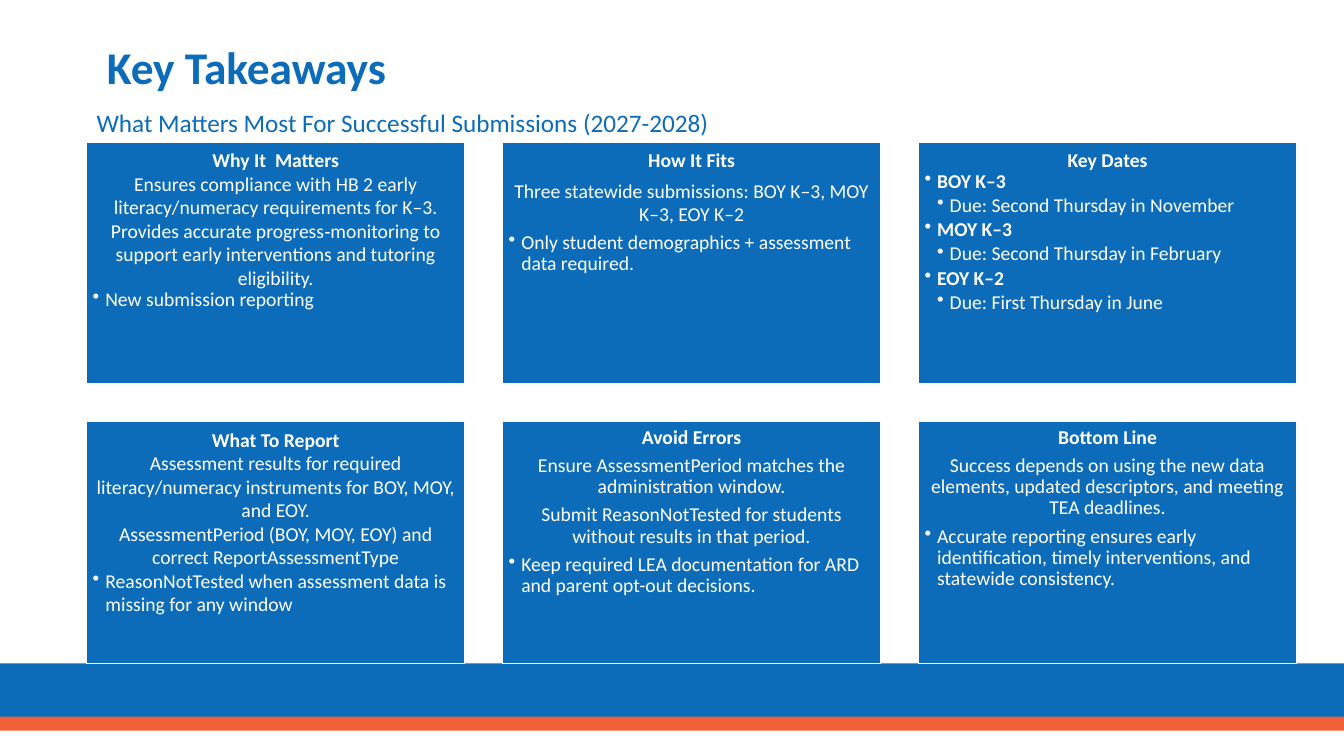
from dataclasses import dataclass

from lxml.etree import SubElement
from pptx import Presentation
from pptx.dml.color import RGBColor
from pptx.enum.shapes import MSO_SHAPE
from pptx.enum.text import MSO_ANCHOR, PP_ALIGN
from pptx.oxml.ns import qn
from pptx.util import Inches, Pt


@dataclass(frozen=True)
class Theme:
    blue: RGBColor = RGBColor(0x0D, 0x6C, 0xB9)
    orange: RGBColor = RGBColor(0xF1, 0x60, 0x38)
    white: RGBColor = RGBColor(0xFF, 0xFF, 0xFF)
    font: str = "Calibri"
    title_size: float = 32.4
    subtitle_size: float = 18
    card_size: float = 14


@dataclass(frozen=True)
class Card:
    heading: str
    leads: tuple = ()
    bullets: tuple = ()  # (text, level, bold)
    spacing: float = 1.0  # heading and leads
    space_after: float = 0
    bullet_spacing: float = 0.9


THEME = Theme()

CARDS = [
    Card("Why It  Matters",
         ("Ensures compliance with HB 2 early literacy/numeracy requirements for K–3.",
          "Provides accurate progress‑monitoring to support early interventions and tutoring eligibility."),
         (("New submission reporting", 1, False),)),
    Card("How It Fits",
         ("Three statewide submissions: BOY K–3, MOY K–3, EOY K–2",),
         (("Only student demographics + assessment data required.", 1, False),),
         space_after=4.9),
    Card("Key Dates",
         bullets=(("BOY K–3", 1, True),
                  ("Due: Second Thursday in November", 2, False),
                  ("MOY K–3", 1, True),
                  ("Due: Second Thursday in February", 2, False),
                  ("EOY K–2", 1, True),
                  ("Due: First Thursday in June", 2, False))),
    Card("What To Report",
         ("Assessment results for required literacy/numeracy instruments for BOY, MOY, and EOY.",
          "AssessmentPeriod (BOY, MOY, EOY) and correct ReportAssessmentType"),
         (("ReasonNotTested when assessment data is missing for any window", 1, False),),
         bullet_spacing=1.0),
    Card("Avoid Errors",
         ("Ensure AssessmentPeriod matches the administration window.",
          "Submit ReasonNotTested for students without results in that period."),
         (("Keep required LEA documentation for ARD and parent opt-out decisions.", 1, False),),
         spacing=0.9, space_after=4.9),
    Card("Bottom Line",
         ("Success depends on using the new data elements, updated descriptors, and meeting TEA deadlines.",),
         (("Accurate reporting ensures early identification, timely interventions, and statewide consistency.",
           1, False),),
         spacing=0.9, space_after=4.9),
]


def write_paragraph(frame, text, size, color, bold=False, align=PP_ALIGN.LEFT,
                    spacing=1.0, space_after=0, bullet_level=0):
    """Fill the first paragraph of the frame, or add one after it."""
    paragraph = frame.paragraphs[0] if not frame.text else frame.add_paragraph()
    if bullet_level:
        paragraph.level = bullet_level
        properties = paragraph._p.get_or_add_pPr()
        properties.set("marL", str(Inches(0.125 * bullet_level)))
        properties.set("indent", str(-Inches(0.125)))
        SubElement(properties, qn("a:buChar"), char="•")
    paragraph.alignment = align
    paragraph.line_spacing = spacing
    paragraph.space_before = Pt(0)
    paragraph.space_after = Pt(space_after)
    run = paragraph.add_run()
    run.text = text
    run.font.name = THEME.font
    run.font.size = Pt(size)
    run.font.bold = bold
    run.font.color.rgb = color


def add_rectangle(slide, left, top, width, height, fill):
    shape = slide.shapes.add_shape(MSO_SHAPE.RECTANGLE, Inches(left), Inches(top),
                                   Inches(width), Inches(height))
    shape.shadow.inherit = False
    shape.fill.solid()
    shape.fill.fore_color.rgb = fill
    shape.line.fill.background()
    return shape


def add_footer(slide, left, top, width):
    add_rectangle(slide, left, top, width, 0.58, THEME.blue)
    add_rectangle(slide, left, top + 0.53, width, 0.14, THEME.orange)


def add_heading(slide, left, top, width):
    # Title
    title = slide.shapes.title
    title.left, title.top = Inches(left + 0.1), Inches(top)
    title.width, title.height = Inches(width), Inches(0.82)
    title.text_frame.vertical_anchor = MSO_ANCHOR.MIDDLE
    write_paragraph(title.text_frame, "Key Takeaways", THEME.title_size, THEME.blue,
                    bold=True, spacing=0.9)
    # Subtitle
    subtitle = slide.shapes.add_textbox(Inches(left), Inches(top + 0.74), Inches(8.64), Inches(0.4))
    subtitle.text_frame.word_wrap = True
    write_paragraph(subtitle.text_frame, "What Matters Most For Successful Submissions (2027-2028)",
                    THEME.subtitle_size, THEME.blue)


def add_card(slide, card, left, top, width, height):
    shape = add_rectangle(slide, left, top, width, height, THEME.blue)
    shape.line.color.rgb = THEME.white
    shape.line.width = Pt(1)
    frame = shape.text_frame
    frame.word_wrap = True
    frame.vertical_anchor = MSO_ANCHOR.TOP
    frame.margin_left = frame.margin_right = Inches(0.06)
    frame.margin_top = frame.margin_bottom = Inches(0.06)
    for index, text in enumerate((card.heading, *card.leads)):
        write_paragraph(frame, text, THEME.card_size, THEME.white, bold=index == 0,
                        align=PP_ALIGN.CENTER, spacing=card.spacing,
                        space_after=card.space_after)
    for text, level, bold in card.bullets:
        write_paragraph(frame, text, THEME.card_size, THEME.white, bold=bold,
                        spacing=card.bullet_spacing, space_after=2.1, bullet_level=level)


def add_card_grid(slide, left, top, width, height, columns=3, rows=2, gap=0.375):
    card_width = (width - gap * (columns - 1)) / columns
    card_height = (height - gap * (rows - 1)) / rows
    for index, card in enumerate(CARDS):
        row, column = divmod(index, columns)
        add_card(slide, card, left + column * (card_width + gap),
                 top + row * (card_height + gap), card_width, card_height)


def main():
    presentation = Presentation()
    presentation.slide_width, presentation.slide_height = Inches(13.33), Inches(7.5)
    slide = presentation.slides.add_slide(presentation.slide_layouts.get_by_name("Title Only"))
    add_footer(slide, 0, 6.58, 13.33)
    add_heading(slide, 0.86, 0.28, 12.16)
    add_card_grid(slide, 0.86, 1.41, 12, 5.17)
    presentation.save("out.pptx")


if __name__ == "__main__":
    main()
